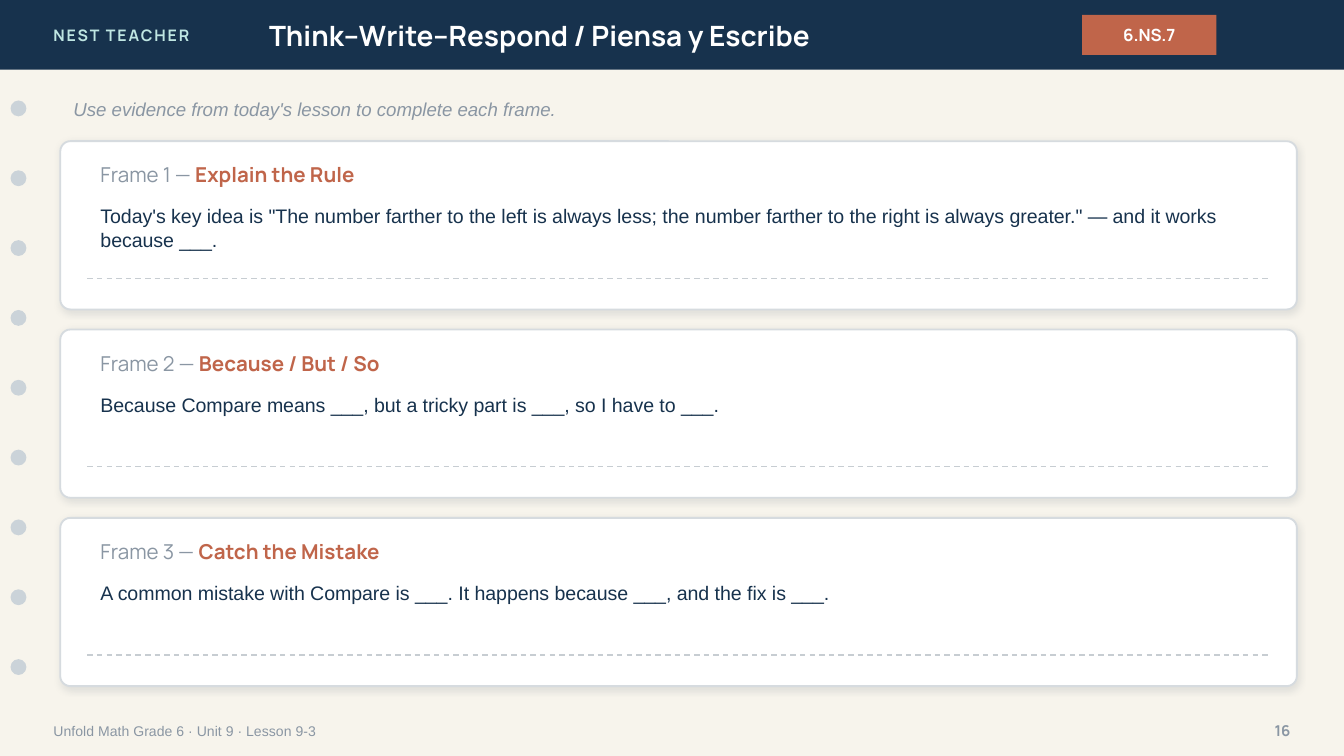
from lxml import etree
from pptx import Presentation, util as u
from pptx.dml.color import RGBColor
from pptx.enum import dml, shapes, text
from pptx.oxml.ns import qn

HEX = {"navy": "17324D", "mint": "BFE6E2", "white": "FFFFFF", "rust": "C0654A",
       "dot": "CBD3D9", "gray": "8A96A3", "edge": "D6DBDF", "dash": "C7CDD2",
       "cream": "F7F4EC", "shade": "1C2E42"}
KIND = shapes.MSO_SHAPE
LEFT, MID, RIGHT = text.PP_ALIGN.LEFT, text.PP_ALIGN.CENTER, text.PP_ALIGN.RIGHT
HEAD, BODY = "Manrope", "Arial"

BRAND = "NEST TEACHER"
TITLE = "Think–Write–Respond / Piensa y Escribe"
CODE = "6.NS.7"
TIP = "Use evidence from today's lesson to complete each frame."
FOOT = "Unfold Math Grade 6 · Unit 9 · Lesson 9-3"
PAGE = "16"
FRAMES = [
    ("Explain the Rule",
     'Today\'s key idea is "The number farther to the left is always less; '
     'the number farther to the right is always greater." — and it works because ___.'),
    ("Because / But / So",
     "Because Compare means ___, but a tricky part is ___, so I have to ___."),
    ("Catch the Mistake",
     "A common mistake with Compare is ___. It happens because ___, and the fix is ___."),
]

# Lengths in centimetres
WIDE, TALL, BAR = 25.4, 14.29, 1.32
DOTS, DOT_X, DOT_Y, DOT = 9, 0.2, 1.9, 0.3
CARD_X, CARD_Y, CARD_W, CARD_H, GAP = 1.14, 2.67, 23.37, 3.18, 0.38
TEXT_X, TEXT_W = 1.65, 22.35


def color(name):
    return RGBColor.from_string(HEX[name])


def style(font, face, size, ink, bold=False, slant=False):
    font.name, font.size = face, u.Pt(size)
    font.bold, font.italic = bold, slant
    font.color.rgb = color(ink)


def write(shape, words, face, size, ink, bold=False, slant=False,
          align=LEFT, anchor=text.MSO_ANCHOR.MIDDLE):
    frame = shape.text_frame
    frame.word_wrap = True
    frame.auto_size = text.MSO_AUTO_SIZE.NONE
    frame.vertical_anchor = anchor
    para = frame.paragraphs[0]
    para.text = words
    para.alignment = align
    style(para.font, face, size, ink, bold, slant)
    return para


def label(x, y, w, h, *args, **opts):
    return write(slide.shapes.add_textbox(*map(u.Cm, (x, y, w, h))), *args, **opts)


def block(kind, x, y, w, h, fill):
    shape = slide.shapes.add_shape(kind, *map(u.Cm, (x, y, w, h)))
    shape.shadow.inherit = False
    shape.fill.solid()
    shape.fill.fore_color.rgb = color(fill)
    shape.line.fill.background()
    return shape


def shade(shape):
    """Give the shape a soft shadow straight below it."""
    cast = etree.SubElement(shape._element.spPr.find(qn("a:effectLst")), qn("a:outerShdw"),
                            blurRad=str(u.Pt(4)), dist=str(u.Pt(1)), dir="5400000",
                            algn="bl", rotWithShape="0")
    tint = etree.SubElement(cast, qn("a:srgbClr"), val=HEX["shade"])
    etree.SubElement(tint, qn("a:alpha"), val="10000")


def rule(y):
    line = slide.shapes.add_connector(shapes.MSO_CONNECTOR.STRAIGHT, *map(
        u.Cm, (TEXT_X, y, TEXT_X + TEXT_W, y)))
    line.line.color.rgb = color("dash")
    line.line.width = u.Pt(0.75)
    line.line.dash_style = dml.MSO_LINE.DASH
    etree.SubElement(line._element.spPr, qn("a:effectLst"))


def card(num, name, body):
    y = CARD_Y + (num - 1) * (CARD_H + GAP)
    box = block(KIND.ROUNDED_RECTANGLE, CARD_X, y, CARD_W, CARD_H, "white")
    box.adjustments[0] = 0.06
    box.line.color.rgb = color("edge")
    box.line.width = u.Pt(1)
    shade(box)
    para = label(TEXT_X, y + 0.25, TEXT_W, 0.76, f"Frame {num} — ", HEAD, 11, "gray")
    run = para.add_run()
    run.text = name
    run.font.bold = True
    run.font.color.rgb = color("rust")
    label(TEXT_X, y + 1.07, TEXT_W, 1.02, body, BODY, 10.5, "navy",
          anchor=text.MSO_ANCHOR.TOP)
    rule(y + 2.59)


deck = Presentation()
deck.slide_width, deck.slide_height = u.Cm(WIDE), u.Cm(TALL)
slide = deck.slides.add_slide(deck.slide_layouts[5])
slide.background.fill.solid()
slide.background.fill.fore_color.rgb = color("cream")

block(KIND.RECTANGLE, 0, 0, WIDE, BAR, "navy")
brand = label(0.76, 0, 6.1, BAR, BRAND, HEAD, 8.5, "mint", bold=True)
brand.runs[0].font._element.set("spc", "100")

title = slide.shapes.title
title.left, title.top, title.width, title.height = map(u.Cm, (4.83, 0, 14.22, BAR))
write(title, TITLE, HEAD, 15, "white", bold=True)
slide.shapes._spTree.append(title._element)  # in front of the bar

badge = block(KIND.RECTANGLE, 20.45, 0.28, 2.54, 0.76, "rust")
write(badge, CODE, HEAD, 9, "white", bold=True, align=MID)

for i in range(DOTS):
    block(KIND.OVAL, DOT_X, DOT_Y + i * BAR, DOT, DOT, "dot")

label(0.76, 13.46, 17.78, 0.71, FOOT, BODY, 7.5, "gray")
label(23.37, 13.46, 1.27, 0.71, PAGE, HEAD, 8, "gray", bold=True, align=RIGHT)
label(CARD_X, 1.68, CARD_W, 0.76, TIP, BODY, 10, "gray", slant=True)

for num, (name, body) in enumerate(FRAMES, 1):
    card(num, name, body)

deck.save("out.pptx")
